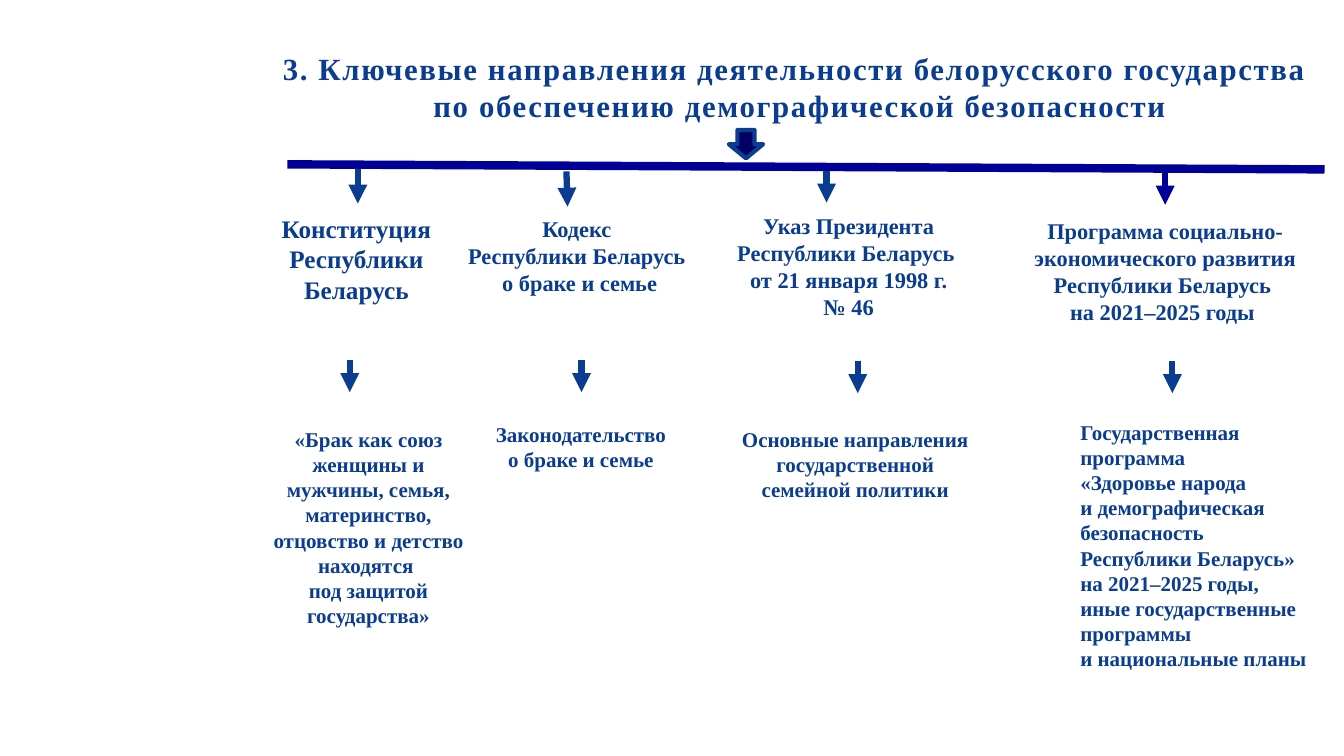
from pptx import Presentation
from pptx.dml.color import RGBColor
from pptx.enum.shapes import MSO_CONNECTOR, MSO_SHAPE
from pptx.enum.text import MSO_ANCHOR, PP_ALIGN
from pptx.oxml.ns import qn
from pptx.util import Pt
from lxml import etree

STRAIGHT = MSO_CONNECTOR.STRAIGHT
ROUNDED, DOWN_ARROW = MSO_SHAPE.ROUNDED_RECTANGLE, MSO_SHAPE.DOWN_ARROW
TOP, MIDDLE = MSO_ANCHOR.TOP, MSO_ANCHOR.MIDDLE
LEFT, CENTER = PP_ALIGN.LEFT, PP_ALIGN.CENTER

FONT = "Times New Roman"
BLUE, NAVY, DARK, WHITE = "0A3C90", "000099", "000066", "FFFFFF"

# "\v" is a line break, "\n" starts a new paragraph
TITLE = ("3.\u00a0Ключевые направления деятельности белорусского государства \v"
         "по обеспечению демографической безопасности")

# Legal acts: box, text, size, anchor, margins (sides, top and bottom)
ACTS = [
    ((196.6, 149, 115.9, 72.7), "Конституция Республики Беларусь", 18, TOP, (0, 0)),
    ((326.2, 150.5, 175.7, 64.1),
     "Кодекс \vРеспублики Беларусь \vо браке и семье", 16, TOP, (0, 0)),
    ((514.8, 147.6, 182.9, 85.7),
     "Указ Президента Республики Беларусь \vот 21 января 1998 г. №\u00a046",
     16, TOP, (0, 0)),
    ((710.6, 146.9, 243.4, 93.6),
     "Программа социально-экономического развития Республики Беларусь \v"
     "на 2021–2025 годы ", 16, MIDDLE, (7.2, 3.6)),
]

# What each act leads to: box, text, alignment
RESULTS = [
    ((185.8, 301, 154.8, 152.6),
     "«Брак как союз женщины и мужчины, семья, материнство, отцовство и детство "
     "находятся \vпод защитой государства»", CENTER),
    ((331.9, 297.4, 169.9, 43.9), "Законодательство \vо браке и семье ", CENTER),
    ((516.2, 301, 189.4, 61.9),
     "Основные направления государственной семейной политики", CENTER),
    ((764.6, 295.9, 188.6, 189.4),
     "Государственная программа \v«Здоровье народа \vи демографическая "
     "безопасность \vРеспублики Беларусь» \vна 2021–2025 годы,\n"
     "иные государственные программы \vи национальные планы", LEFT),
]

# Arrows: x1, y1, x2, y2, colour
ARROWS = [
    (255.6, 121, 255.6, 145.4, BLUE),
    (404.6, 122.4, 405.4, 147.6, BLUE),
    (590.4, 122.4, 590.4, 144.7, BLUE),
    (832.3, 123.8, 832.3, 146.2, NAVY),
    (249.8, 257, 249.8, 280.1, BLUE),
    (415.4, 257, 415.4, 280.1, BLUE),
    (612.7, 257.8, 612.7, 280.8, BLUE),
    (837.4, 257.8, 837.4, 280.8, BLUE),
]


def rgb(value):
    return RGBColor.from_string(value)


def write(tf, text, size, align=CENTER, anchor=TOP, margins=(7.2, 3.6), spacing=None):
    """Fill a text frame with bold blue text."""
    tf.word_wrap = True
    tf.vertical_anchor = anchor
    tf.margin_left = tf.margin_right = Pt(margins[0])
    tf.margin_top = tf.margin_bottom = Pt(margins[1])
    tf.text = text
    for p in tf.paragraphs:
        p.alignment = align
        p.font.name = FONT
        p.font.size = Pt(size)
        p.font.bold = True
        p.font.color.rgb = rgb(BLUE)
        if spacing:
            for r in p.runs:
                r.font._element.set("spc", str(round(spacing * 100)))


def add_title(slide, text):
    sp = slide.shapes.title
    sp.left, sp.top, sp.width, sp.height = map(Pt, (196.6, 35.3, 749.5, 53.2))
    write(sp.text_frame, text, 22, margins=(0, 0), spacing=1.2)


def add_shape(slide, kind, box, fill, line=None, width=0):
    sp = slide.shapes.add_shape(kind, *map(Pt, box))
    sp.shadow.inherit = False
    sp.fill.solid()
    sp.fill.fore_color.rgb = rgb(fill)
    if line:
        sp.line.color.rgb = rgb(line)
        sp.line.width = Pt(width)
    else:
        sp.line.fill.background()
    return sp


def add_line(slide, x1, y1, x2, y2, color, width=4.5, arrow=True):
    line = slide.shapes.add_connector(STRAIGHT, *map(Pt, (x1, y1, x2, y2)))
    line.line.color.rgb = rgb(color)
    line.line.width = Pt(width)
    if arrow:
        etree.SubElement(line.line._get_or_add_ln(), qn("a:tailEnd"), type="triangle")
    etree.SubElement(line._element.spPr, qn("a:effectLst"))


def main():
    prs = Presentation()
    prs.slide_width, prs.slide_height = Pt(960), Pt(540)
    slide = prs.slides.add_slide(prs.slide_layouts[5])

    # Title and the arrow under it
    add_title(slide, TITLE)
    add_shape(slide, DOWN_ARROW, (520.6, 92.9, 24.5, 20.2), DARK, BLUE, 3)

    # Legal acts
    for box, text, size, anchor, margins in ACTS:
        sp = add_shape(slide, ROUNDED, box, WHITE)
        write(sp.text_frame, text, size, anchor=anchor, margins=margins)

    # Results
    for box, text, align in RESULTS:
        sp = slide.shapes.add_textbox(*map(Pt, box))
        write(sp.text_frame, text, 15, align)

    # Common bar and arrows
    add_line(slide, 205.2, 117.4, 946.1, 121, NAVY, 6, arrow=False)
    for arrow in ARROWS:
        add_line(slide, *arrow)

    prs.save("out.pptx")


if __name__ == "__main__":
    main()
